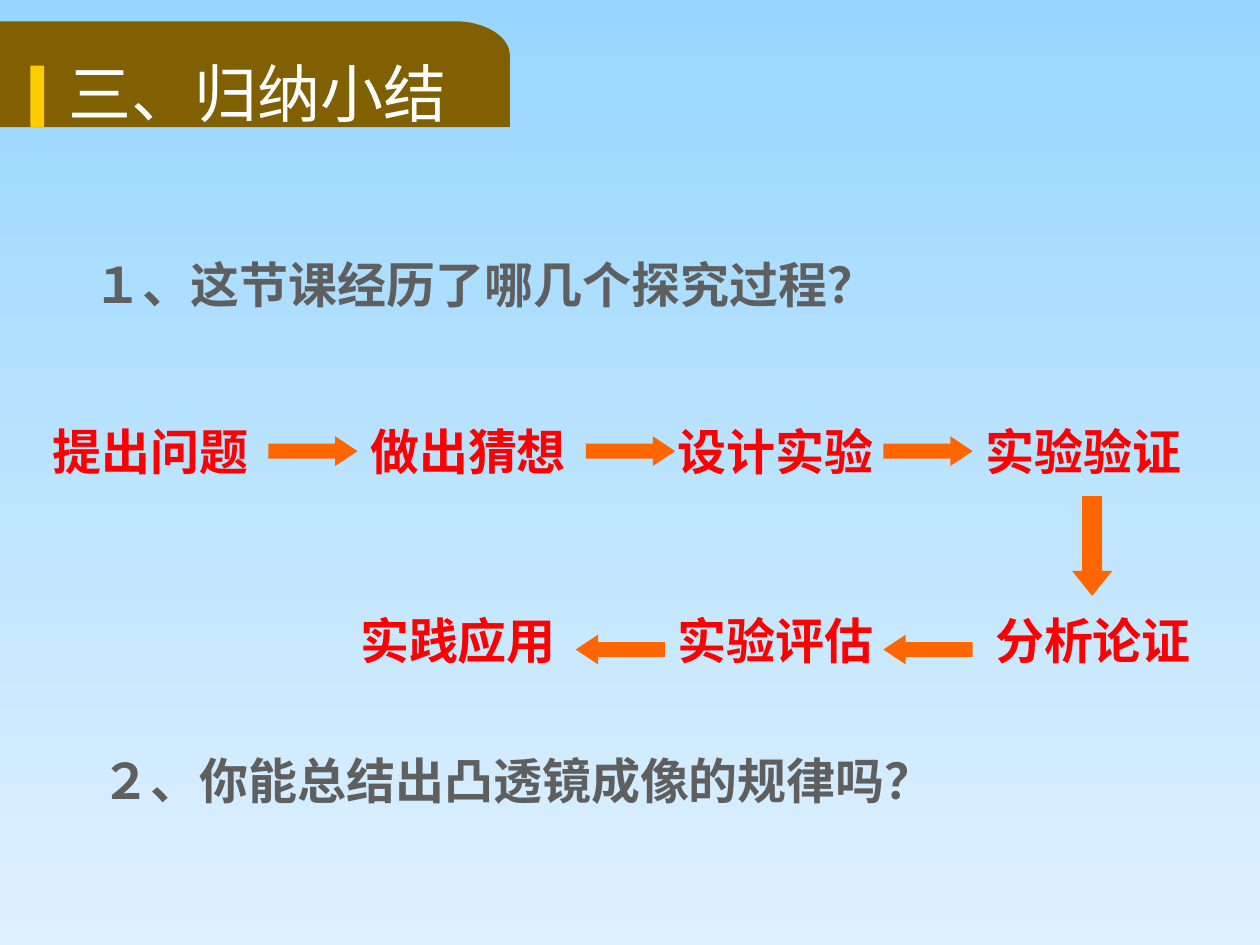
from dataclasses import dataclass
from math import cos, pi, sin

from lxml.etree import SubElement
from pptx import Presentation
from pptx.dml.color import RGBColor
from pptx.enum.shapes import MSO_SHAPE
from pptx.enum.text import MSO_ANCHOR
from pptx.oxml.ns import qn
from pptx.util import Pt


@dataclass(frozen=True)
class Theme:
    sky_top: str = "97D6FF"
    sky_bottom: str = "DFF1FF"
    tab: str = "806000"
    marker: str = "FFCC00"
    arrow: str = "FF6600"
    title: str = "FFFFFF"
    question: str = "5F5F5F"
    step: str = "FF0000"
    title_font: str = "Noto Sans CJK SC"
    text_font: str = "Arial"
    asian_font: str = "Noto Sans CJK SC"
    title_size: int = 36
    text_size: int = 28


THEME = Theme()

# Content: positions in points
TITLE = ("三、归纳小结", (31.7, 29.5, 268.6, 51.8))
QUESTIONS = [
    ("１、这节课经历了哪几个探究过程？", (46, 142, 482, 41)),
    ("２、你能总结出凸透镜成像的规律吗？", (51, 425.5, 578, 41)),
]
STEP_SIZE = (136, 41)
STEP_ROWS = [
    (237.6, [("提出问题", 23), ("做出猜想", 204.5), ("设计实验", 380), ("实验验证", 556)]),
    (345.6, [("实践应用", 198.7), ("实验评估", 380), ("分析论证", 561.6)]),
]
ACROSS = (51, 17)
ARROWS = [
    (MSO_SHAPE.RIGHT_ARROW, 249.3, [153.3, 334.8, 504.8], ACROSS, 0.75),
    (MSO_SHAPE.DOWN_ARROW, 283.5, [612.6], (23, 57), 0.62),
    (MSO_SHAPE.LEFT_ARROW, 362.7, [329, 504.8], ACROSS, 0.75),
]
TAB = (-2, 12.2, 291.4, 72.7)  # left, top, right, bottom
TAB_CORNER = (31.5, 19.5)
MARKER = (17.3, 37.5, 7.9, 35.2)


def color(value):
    return RGBColor.from_string(value)


def paint(shape, value):
    shape.shadow.inherit = False
    shape.fill.solid()
    shape.fill.fore_color.rgb = color(value)
    shape.line.fill.background()


def place(shape, frame):
    shape.left, shape.top, shape.width, shape.height = map(Pt, frame)


def write(box, text, size, value, font, bold, anchor=MSO_ANCHOR.TOP):
    frame = box.text_frame
    frame.word_wrap = True
    frame.vertical_anchor = anchor
    frame.text = text
    paragraph = frame.paragraphs[0]
    paragraph.space_before = Pt(0)
    paragraph.font.size = Pt(size)
    paragraph.font.bold = bold
    paragraph.font.color.rgb = color(value)
    paragraph.font.name = font
    properties = paragraph._p.get_or_add_pPr()
    properties.set("marL", "0")
    properties.set("indent", "0")
    properties.set("algn", "l")
    defaults = properties.find(qn("a:defRPr"))
    defaults.addprevious(defaults.makeelement(qn("a:buNone")))
    SubElement(defaults, qn("a:ea")).set("typeface", THEME.asian_font)
    return paragraph


def add_tab(page):
    left, top, right, bottom = TAB
    wide, high = TAB_CORNER
    angles = [step * pi / 32 for step in range(17)]
    curve = [(right - wide + wide * sin(a), top + high - high * cos(a)) for a in angles]
    points = [(Pt(x), Pt(y)) for x, y in curve + [(right, bottom), (left, bottom)]]
    builder = page.shapes.build_freeform(Pt(left), Pt(top))
    builder.add_line_segments(points, close=True)
    tab = builder.convert_to_shape()
    paint(tab, THEME.tab)
    return tab


def main():
    deck = Presentation()
    deck.slide_width, deck.slide_height = Pt(720), Pt(540)
    page = deck.slides.add_slide(deck.slide_layouts.get_by_name("Two Content"))

    # Sky background
    sky = page.background.fill
    sky.gradient()
    sky.gradient_angle = 270
    for stop, value, position in zip(
        sky.gradient_stops, (THEME.sky_top, THEME.sky_bottom), (0, 1)
    ):
        stop.color.rgb = color(value)
        stop.position = position

    # Title tab and marker, sent behind the title
    tab = add_tab(page)
    marker = page.shapes.add_shape(MSO_SHAPE.RECTANGLE, *map(Pt, MARKER))
    paint(marker, THEME.marker)
    title, *bodies = page.placeholders
    for part in (tab, marker):
        title._element.addprevious(part._element)

    # Title and questions
    text, frame = TITLE
    place(title, frame)
    heading = write(title, text, THEME.title_size, THEME.title,
                    THEME.title_font, False, MSO_ANCHOR.MIDDLE)
    heading.line_spacing = 0.9
    for body, (text, frame) in zip(bodies, QUESTIONS):
        place(body, frame)
        write(body, text, THEME.text_size, THEME.question, THEME.text_font, True)

    # Process steps
    for top, steps in STEP_ROWS:
        for text, left in steps:
            box = page.shapes.add_textbox(Pt(left), Pt(top), *map(Pt, STEP_SIZE))
            write(box, text, THEME.text_size, THEME.step, THEME.text_font, True)

    # Arrows between the steps
    for kind, top, lefts, size, head in ARROWS:
        for left in lefts:
            arrow = page.shapes.add_shape(kind, *map(Pt, (left, top, *size)))
            arrow.adjustments[0] = 0.5
            arrow.adjustments[1] = head
            paint(arrow, THEME.arrow)

    deck.save("out.pptx")


if __name__ == "__main__":
    main()
